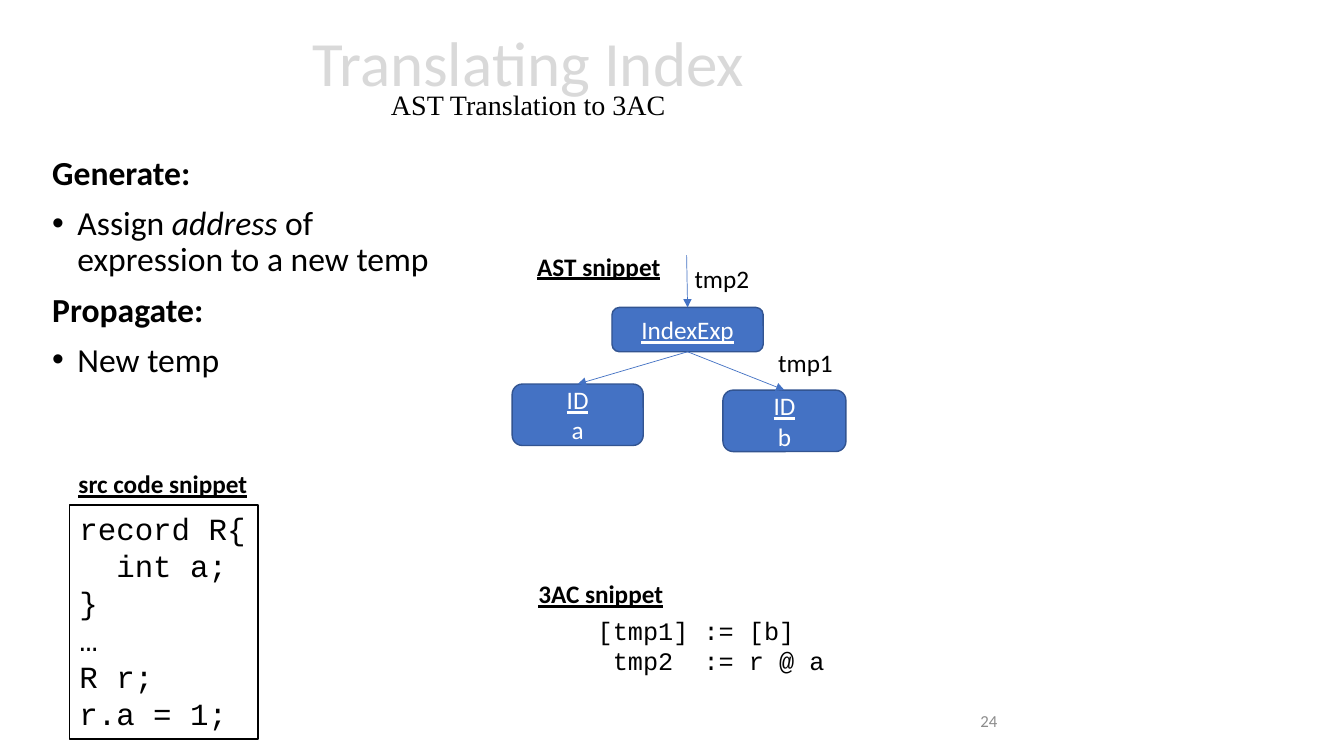
"""Build the slide on translating index expressions to three-address code."""
from dataclasses import dataclass
from typing import NamedTuple

from lxml import etree
from pptx import Presentation
from pptx.dml.color import RGBColor
from pptx.enum.shapes import MSO_CONNECTOR, MSO_SHAPE
from pptx.enum.text import MSO_ANCHOR, MSO_AUTO_SIZE, PP_ALIGN
from pptx.oxml.ns import qn
from pptx.util import Inches, Pt

STRAIGHT = MSO_CONNECTOR.STRAIGHT
RECTANGLE, ROUNDED = MSO_SHAPE.RECTANGLE, MSO_SHAPE.ROUNDED_RECTANGLE
TOP, MIDDLE = MSO_ANCHOR.TOP, MSO_ANCHOR.MIDDLE
LEFT, CENTER, RIGHT = PP_ALIGN.LEFT, PP_ALIGN.CENTER, PP_ALIGN.RIGHT
GROW, FIXED = MSO_AUTO_SIZE.SHAPE_TO_FIT_TEXT, MSO_AUTO_SIZE.NONE
TOP_SITE, BOTTOM_SITE = 0, 2


@dataclass(frozen=True)
class Theme:
    """Colours, fonts and type sizes of the slide."""
    black: str = "000000"
    white: str = "FFFFFF"
    title_gray: str = "D9D9D9"
    number_gray: str = "8C8C8C"
    blue: str = "4472C4"
    dark_blue: str = "325491"
    sans: str = "Calibri"
    serif: str = "Times New Roman"
    mono: str = "Courier New"
    title: int = 45
    body: int = 24
    code: int = 22
    subtitle: int = 20
    label: int = 18
    number: int = 12


THEME = Theme()


class Box(NamedTuple):
    """Position and size in inches."""
    left: float
    top: float
    width: float
    height: float


class Span(NamedTuple):
    """A stretch of text with overrides of its text format."""
    text: str
    style: dict = {}


class Line(NamedTuple):
    """A paragraph made of spans."""
    spans: list[Span]
    bullet: bool = False


class Label(NamedTuple):
    """A one-line caption."""
    text: str
    box: Box
    heading: bool = False


class Node(NamedTuple):
    """A syntax tree node."""
    lines: list[str]
    box: Box


LABELS = [
    Label("tmp2", Box(6.79, 2.56, 0.75, 0.4)),
    Label("tmp1", Box(7.62, 3.4, 0.75, 0.4)),
    Label("src code snippet", Box(0.68, 4.6, 1.89, 0.4), True),
    Label("AST snippet", Box(5.23, 2.44, 1.43, 0.4), True),
    Label("3AC snippet", Box(5.24, 5.69, 1.45, 0.4), True),
]
INDEX_NODE = Node(["IndexExp"], Box(6.07, 3.05, 1.5, 0.44))
CHILD_NODES = [
    Node(["ID", "a"], Box(5.08, 3.81, 1.3, 0.61)),
    Node(["ID", "b"], Box(7.17, 3.87, 1.22, 0.61)),
]
SOURCE_CODE = ["record R{", "  int a;", "}", "…", "R r;", "r.a = 1;"]
THREE_ADDRESS_CODE = ["[tmp1] := [b]", " tmp2  := r @ a"]
BODY = [
    Line([Span("Generate:", {"bold": True})]),
    Line([Span("Assign "), Span("address ", {"italic": True}),
          Span("of expression to a new temp")], True),
    Line([Span("Propagate:", {"bold": True})]),
    Line([Span("New temp")], True),
]


def plain(texts: list[str]) -> list[Line]:
    """Turn strings into unformatted lines."""
    return [Line([Span(text)]) for text in texts]


def format_font(font, size=THEME.label, name=THEME.sans, color=THEME.black,
                bold=False, italic=False, underline=False) -> None:
    """Set every font property."""
    font.size, font.name = Pt(size), name
    font.bold, font.italic, font.underline = bold, italic, underline
    font.color.rgb = RGBColor.from_string(color)


def add_bullet(paragraph) -> None:
    """Give a paragraph a hanging bullet."""
    properties = paragraph._p.get_or_add_pPr()
    properties.set("marL", str(Inches(0.25)))
    properties.set("indent", str(Inches(-0.25)))
    etree.SubElement(properties, qn("a:buFont"), typeface="Arial")
    etree.SubElement(properties, qn("a:buChar"), char="•")


def write_text(shape, lines: list[Line], anchor=TOP, align=LEFT, wrap=True, grow=False,
               spacing=1.0, before=0, **style) -> None:
    """Fill a shape with formatted lines."""
    frame = shape.text_frame
    frame.word_wrap, frame.vertical_anchor = wrap, anchor
    frame.auto_size = GROW if grow else FIXED
    for index, line in enumerate(lines):
        paragraph = frame.add_paragraph() if index else frame.paragraphs[0]
        paragraph.alignment, paragraph.line_spacing = align, spacing
        paragraph.space_before = Pt(before)
        if line.bullet:
            add_bullet(paragraph)
        for span in line.spans:
            if span.text == "\n":
                paragraph.add_line_break()
                continue
            run = paragraph.add_run()
            run.text = span.text
            format_font(run.font, **{**style, **span.style})


def add_text(slide, box: Box, lines: list[Line], **style):
    """Add a text box."""
    shape = slide.shapes.add_textbox(*map(Inches, box))
    write_text(shape, lines, **style)
    return shape


def add_panel(slide, kind, box: Box, fill: str, outline: str):
    """Add a filled and outlined shape."""
    shape = slide.shapes.add_shape(kind, *map(Inches, box))
    shape.shadow.inherit = False
    shape.fill.solid()
    shape.fill.fore_color.rgb = RGBColor.from_string(fill)
    shape.line.color.rgb = RGBColor.from_string(outline)
    shape.line.width = Pt(1)
    return shape


def add_node(slide, node: Node):
    """Add a tree node whose first line is underlined."""
    shape = add_panel(slide, ROUNDED, node.box, THEME.blue, THEME.dark_blue)
    lines = [Line([Span(text, {"underline": index == 0})])
             for index, text in enumerate(node.lines)]
    write_text(shape, lines, anchor=MIDDLE, align=CENTER, color=THEME.white)
    return shape


def add_arrow(slide, target, source=None, start=(0.0, 0.0)) -> None:
    """Add an arrow to the top of a node, from a node or a free point."""
    left, top = map(Inches, start)
    connector = slide.shapes.add_connector(STRAIGHT, left, top, left, top)
    if source is not None:
        connector.begin_connect(source, BOTTOM_SITE)
    connector.end_connect(target, TOP_SITE)
    connector.line.color.rgb = RGBColor.from_string(THEME.blue)
    connector.line.width = Pt(0.5)
    etree.SubElement(connector.line._get_or_add_ln(), qn("a:tailEnd"), type="triangle")
    etree.SubElement(connector._element.spPr, qn("a:effectLst"))


def main() -> None:
    """Build and save the slide."""
    presentation = Presentation()
    presentation.slide_width, presentation.slide_height = Inches(13.33), Inches(7.5)
    slide = presentation.slides.add_slide(presentation.slide_layouts[6])

    title = Line([Span("Translating Index", {"size": THEME.title, "color": THEME.title_gray}),
                  Span("\n"),
                  Span("AST Translation to 3AC", {"size": THEME.subtitle, "name": THEME.serif})])
    add_text(slide, Box(0.24, 0.09, 10, 1.45), [title], anchor=MIDDLE, align=CENTER, spacing=0.7)
    add_text(slide, Box(0.42, 1.5, 4.06, 2.92), BODY, size=THEME.body, spacing=0.9, before=10)
    add_text(slide, Box(6.99, 6.95, 3, 0.4), plain(["24"]), anchor=MIDDLE, align=RIGHT,
             size=THEME.number, color=THEME.number_gray)

    index_shape = add_node(slide, INDEX_NODE)
    for node in CHILD_NODES:
        add_arrow(slide, add_node(slide, node), source=index_shape)
    add_arrow(slide, index_shape, start=(6.81, 2.53))

    for label in LABELS:
        add_text(slide, label.box, plain([label.text]), wrap=False, grow=True,
                 bold=label.heading, underline=label.heading)
    add_text(slide, Box(5.83, 6.05, 2.46, 0.71), plain(THREE_ADDRESS_CODE), wrap=False,
             grow=True, name=THEME.mono)
    source_panel = add_panel(slide, RECTANGLE, Box(0.69, 5.01, 1.87, 2.32),
                             THEME.white, THEME.black)
    write_text(source_panel, plain(SOURCE_CODE), wrap=False, grow=True,
               size=THEME.code, name=THEME.mono)
    presentation.save("out.pptx")


if __name__ == "__main__":
    main()
